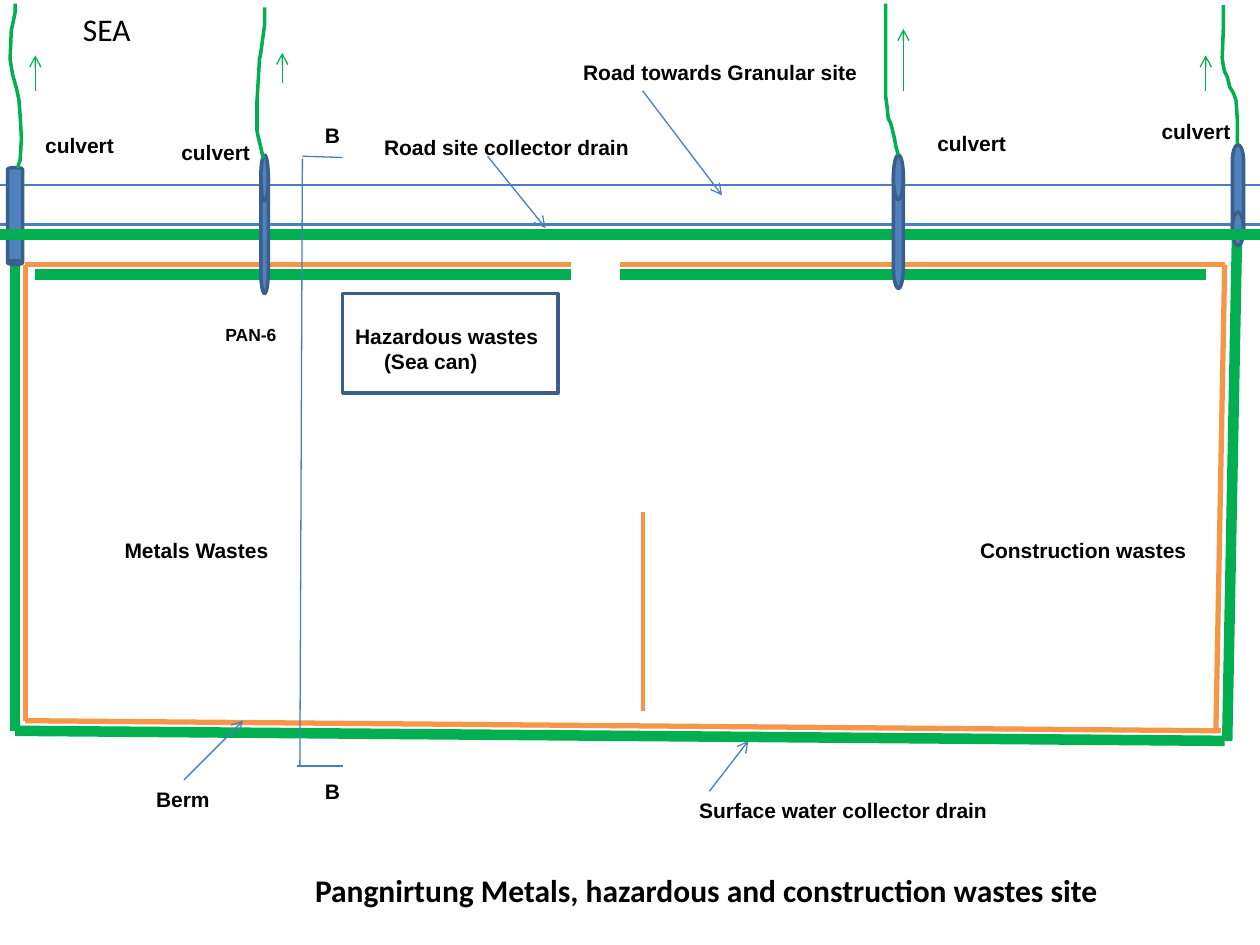
import pptx
import pptx.util
from pptx.dml.color import RGBColor
from pptx.enum.shapes import MSO_CONNECTOR, MSO_SHAPE
from pptx.enum.text import MSO_ANCHOR, MSO_AUTO_SIZE, PP_ALIGN
from pptx.oxml.ns import qn
from lxml import etree

COLUMNS, ROWS = 10, 7.5
CELL = pptx.util.Inches(1)
ROAD, BERM, DRAIN = "4B7EBC", "F79646", "00B050"
CULVERT, OUTLINE, BLACK = "4F81BD", "3A5F8C", "000000"
ROAD_TOP, ROAD_BOTTOM, ROAD_DRAIN = 1.47, 1.78, 1.86
BERM_TOP, INNER_DRAIN = 2.1, 2.18
GATE_LEFT, GATE_RIGHT = 4.53, 4.92


def grid(*cells):
    return [round(cell * CELL) for cell in cells]


def color(value):
    return RGBColor.from_string(value)


def set_outline(shape, value, weight):
    shape.line.color.rgb = color(value)
    shape.line.width = pptx.util.Pt(weight)


def write(frame, text, size=12, font="Arial", bold=True, indents=()):
    frame.word_wrap = False
    frame.auto_size = MSO_AUTO_SIZE.SHAPE_TO_FIT_TEXT
    frame.vertical_anchor = MSO_ANCHOR.TOP
    frame.text = text
    for paragraph in frame.paragraphs:
        paragraph.alignment = PP_ALIGN.LEFT
        paragraph.font.size = pptx.util.Pt(size)
        paragraph.font.name = font
        paragraph.font.bold = bold
        paragraph.font.color.rgb = color(BLACK)
    for paragraph, indent in zip(frame.paragraphs, indents):
        properties = paragraph._p.get_or_add_pPr()
        properties.set("marL", str(grid(indent)[0]))
        properties.set("indent", "0")


def add_label(slide, text, left, top, width, height=0.3, **text_format):
    box = slide.shapes.add_textbox(*grid(left, top, width, height))
    write(box.text_frame, text, **text_format)


def add_line(slide, start, end, value, weight, arrow=False):
    line = slide.shapes.add_connector(MSO_CONNECTOR.STRAIGHT, *grid(*start, *end))
    set_outline(line, value, weight)
    if arrow:
        etree.SubElement(line.line._get_or_add_ln(), qn("a:tailEnd"), type="arrow")
    etree.SubElement(line._element.spPr, qn("a:effectLst"))


def add_block(slide, kind, left, top, width, height, fill=None, flipped=False):
    shape = slide.shapes.add_shape(kind, *grid(left, top, width, height))
    shape.shadow.inherit = False
    set_outline(shape, OUTLINE, 2)
    if fill:
        shape.fill.solid()
        shape.fill.fore_color.rgb = color(fill)
    else:
        shape.fill.background()
    if flipped:
        shape._element.spPr.find(qn("a:xfrm")).set("flipV", "1")


def add_stream(slide, points):
    start, *others = [grid(*point) for point in points]
    builder = slide.shapes.build_freeform(*start)
    builder.add_line_segments(others, close=False)
    stream = builder.convert_to_shape()
    stream.shadow.inherit = False
    stream.fill.background()
    set_outline(stream, DRAIN, 2)


def draw_road_and_site(slide):
    add_line(slide, (0, ROAD_TOP), (COLUMNS, ROAD_TOP), ROAD, 1.5)
    add_line(slide, (0, ROAD_BOTTOM), (COLUMNS, ROAD_BOTTOM), ROAD, 1.5)
    for start, end in (
        ((0.2, BERM_TOP), (GATE_LEFT, BERM_TOP)),
        ((GATE_RIGHT, BERM_TOP), (9.72, BERM_TOP)),
        ((0.2, BERM_TOP), (0.2, 5.72)),
        ((0.2, 5.72), (9.69, 5.8)),
        ((9.72, BERM_TOP), (9.65, 5.8)),
    ):
        add_line(slide, start, end, BERM, 3)
    for start, end in (
        ((0.12, 2.02), (0.12, 5.8)),
        ((0.12, 5.8), (9.72, 5.88)),
        ((9.74, 5.88), (9.82, 1.76)),
        ((0.28, INNER_DRAIN), (GATE_LEFT, INNER_DRAIN)),
        ((GATE_RIGHT, INNER_DRAIN), (9.57, INNER_DRAIN)),
    ):
        add_line(slide, start, end, DRAIN, 6)
    add_line(slide, (5.1, 4.06), (5.1, 5.64), BERM, 2.25)


def draw_culverts(slide):
    disk = MSO_SHAPE.FLOWCHART_MAGNETIC_DISK
    add_block(slide, disk, 9.78, 1.15, 0.09, 0.8, CULVERT, flipped=True)
    add_block(slide, MSO_SHAPE.CAN, 0.06, 1.33, 0.12, 0.77, CULVERT, flipped=True)
    add_line(slide, (0, ROAD_DRAIN), (COLUMNS, ROAD_DRAIN), DRAIN, 6)
    add_block(slide, disk, 2.07, 1.23, 0.06, 1.1, CULVERT)
    add_block(slide, disk, 7.09, 1.23, 0.08, 1.06, CULVERT)
    for left, top in ((0.26, 1), (1.34, 1.06), (7.34, 0.99), (9.12, 0.89)):
        add_label(slide, "culvert", left, top, 0.75)


def draw_streams(slide):
    for points in (
        [(0.14, 1.33), (0.16, 1.27), (0.17, 1.1), (0.16, 0.92), (0.15, 0.79),
         (0.13, 0.7), (0.1, 0.59), (0.08, 0.47), (0.09, 0.24), (0.11, 0.15),
         (0.12, 0.1), (0.12, 0.03)],
        [(2.09, 1.26), (2.07, 1.17), (2.05, 1.09), (2.04, 1.04), (2.04, 0.8),
         (2.06, 0.47), (2.07, 0.42), (2.1, 0.2), (2.1, 0.06)],
        [(7.13, 1.23), (7.11, 1.16), (7.1, 1.1), (7.09, 1.06), (7.07, 0.98),
         (7.05, 0.94), (7.04, 0.84), (7.03, 0.77), (7.03, 0.03)],
        [(9.82, 1.14), (9.82, 0.95), (9.81, 0.8), (9.79, 0.74), (9.76, 0.69),
         (9.74, 0.61), (9.72, 0.57), (9.71, 0.53), (9.7, 0.46), (9.71, 0.2),
         (9.71, 0.04)],
    ):
        add_stream(slide, points)
    for column, bottom, top in (
        (0.28, 0.72, 0.44),
        (2.24, 0.66, 0.42),
        (7.17, 0.72, 0.23),
        (9.57, 0.72, 0.44),
    ):
        add_line(slide, (column, bottom), (column, top), DRAIN, 0.75, arrow=True)


def draw_section(slide):
    for start, end in (
        ((2.4, 1.26), (2.38, 6.08)),
        ((2.4, 1.24), (2.72, 1.25)),
        ((2.36, 6.08), (2.72, 6.08)),
    ):
        add_line(slide, start, end, ROAD, 0.75)
    for top in (0.92, 6.13):
        add_label(slide, "B", 2.48, top, 0.32)


def draw_labels(slide):
    add_block(slide, MSO_SHAPE.RECTANGLE, 2.72, 2.33, 1.71, 0.79)
    add_label(slide, "Hazardous wastes\n(Sea can)", 2.72, 2.52, 1.67, 0.5,
              indents=(0, 0.23))
    for text, left, top, width in (
        ("Road towards Granular site", 4.53, 0.42, 2.4),
        ("Road site collector drain", 2.95, 1.02, 2.17),
        ("Surface water collector drain", 5.45, 6.28, 2.51),
        ("Berm", 1.14, 6.19, 0.63),
        ("Metals Wastes", 0.89, 4.22, 1.36),
        ("Construction wastes", 7.68, 4.22, 1.86),
    ):
        add_label(slide, text, left, top, width)
    for start, end in (
        ((5.1, 0.72), (5.73, 1.55)),
        ((3.87, 1.24), (4.33, 1.81)),
        ((1.46, 6.19), (1.93, 5.72)),
        ((5.63, 6.28), (5.94, 5.88)),
    ):
        add_line(slide, start, end, ROAD, 0.75, arrow=True)
    add_label(slide, "PAN-6", 1.69, 2.52, 0.62, 0.27, size=10)
    add_label(slide, "SEA", 0.56, 0.03, 0.58, 0.4, size=18, font="Calibri", bold=False)


def place_title(slide):
    title = slide.shapes.title
    title.left, title.top, title.width, title.height = grid(2.4, 6.86, 6.46, 0.4)
    write(title.text_frame, "Pangnirtung Metals, hazardous and construction wastes site",
          size=18, font="Calibri")


def main():
    presentation = pptx.Presentation()
    presentation.slide_width, presentation.slide_height = grid(COLUMNS, ROWS)
    slide = presentation.slides.add_slide(presentation.slide_layouts[5])
    place_title(slide)
    draw_road_and_site(slide)
    draw_culverts(slide)
    draw_streams(slide)
    draw_labels(slide)
    draw_section(slide)
    presentation.save("out.pptx")


if __name__ == "__main__":
    main()
